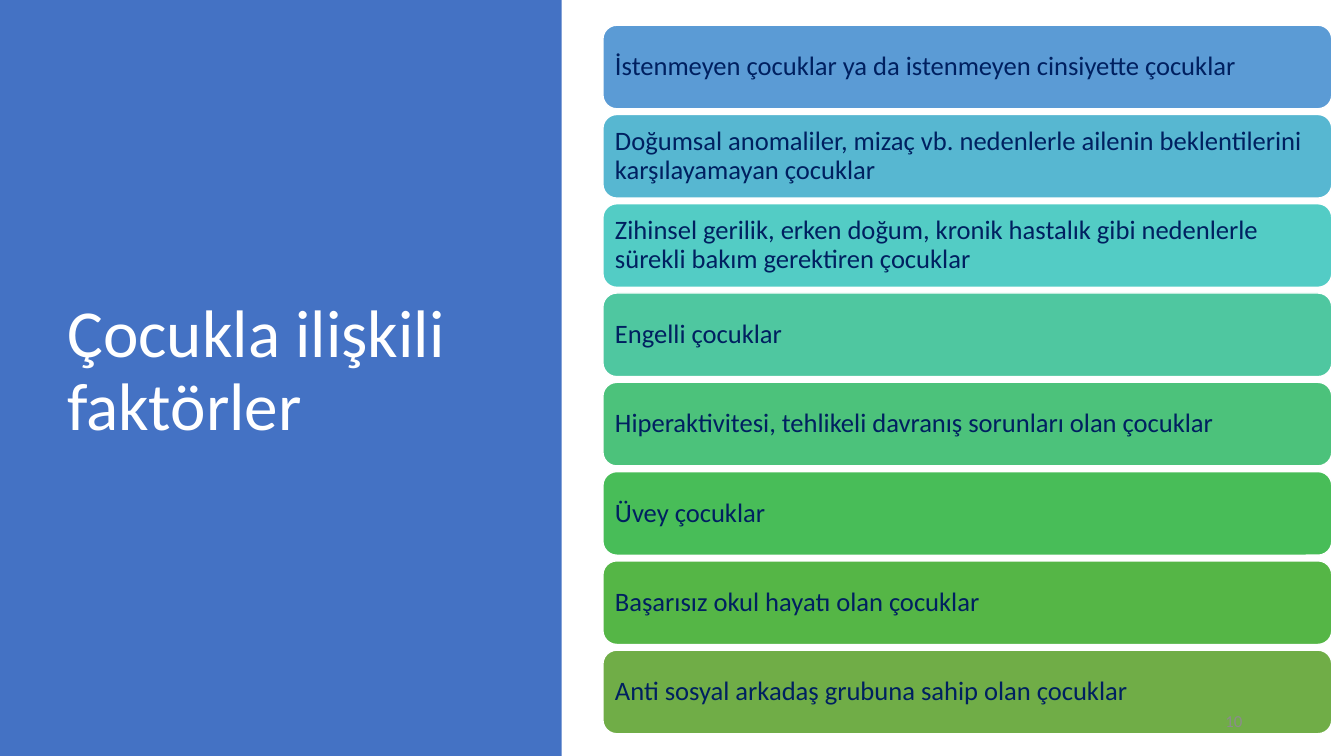
from pptx import Presentation
from pptx.dml.color import RGBColor
from pptx.enum.shapes import MSO_SHAPE
from pptx.enum.text import MSO_ANCHOR, PP_ALIGN
from pptx.util import Inches, Pt

TITLE = "Çocukla ilişkili faktörler"
PAGE = "10"
FACTORS = [
    ("İstenmeyen çocuklar ya da istenmeyen cinsiyette çocuklar", "5B9BD5"),
    ("Doğumsal anomaliler, mizaç vb. nedenlerle ailenin beklentilerini "
     "karşılayamayan çocuklar", "57B7D1"),
    ("Zihinsel gerilik, erken doğum, kronik hastalık gibi nedenlerle "
     "sürekli bakım gerektiren çocuklar", "53CCC5"),
    ("Engelli çocuklar", "4FC7A0"),
    ("Hiperaktivitesi, tehlikeli davranış sorunları olan çocuklar", "4CC27B"),
    ("Üvey çocuklar", "48BD58"),
    ("Başarısız okul hayatı olan çocuklar", "55B646"),
    ("Anti sosyal arkadaş grubuna sahip olan çocuklar", "70AD47"),
]
WHITE, NAVY, BLUE, GREY = "FFFFFF", "002060", "4472C4", "8C8C8C"
LEFT, WIDTH, HEIGHT = 5.98, 7.23, 0.83
FIRST, LAST = 0.25, 6.45


def color(code):
    return RGBColor.from_string(code)


def write(shape, text, size, ink, align=PP_ALIGN.LEFT, inset=None, lines=1.0):
    """Put one paragraph, centred vertically, into a shape."""
    frame = shape.text_frame
    frame.word_wrap = True
    frame.vertical_anchor = MSO_ANCHOR.MIDDLE
    if inset is not None:
        frame.margin_left = frame.margin_right = Inches(inset)
        frame.margin_top = frame.margin_bottom = Inches(inset)
    para = frame.paragraphs[0]
    para.alignment = align
    para.line_spacing = lines
    run = para.add_run()
    run.text = text
    run.font.size = Pt(size)
    run.font.name = "Calibri"
    run.font.color.rgb = color(ink)


def block(slide, kind, box, fill, line=None):
    """Add a filled shape, outlined only when a line colour is given."""
    shape = slide.shapes.add_shape(kind, *map(Inches, box))
    shape.shadow.inherit = False
    shape.fill.solid()
    shape.fill.fore_color.rgb = color(fill)
    if line:
        shape.line.color.rgb = color(line)
        shape.line.width = Pt(1)
    else:
        shape.line.fill.background()
    return shape


def label(slide, box, text, size, ink, **form):
    write(slide.shapes.add_textbox(*map(Inches, box)), text, size, ink, **form)


def main():
    deck = Presentation()
    deck.slide_width, deck.slide_height = Inches(13.33), Inches(7.5)
    slide = deck.slides.add_slide(deck.slide_layouts[6])

    block(slide, MSO_SHAPE.RECTANGLE, (0, 0, 5.57, 7.5), BLUE)
    label(slide, (0.57, 0.68, 4.16, 6.02), TITLE, 48, WHITE, lines=0.9)

    step = (LAST - FIRST) / (len(FACTORS) - 1)
    for i, (text, fill) in enumerate(FACTORS):
        box = (LEFT, FIRST + i * step, WIDTH, HEIGHT)
        bar = block(slide, MSO_SHAPE.ROUNDED_RECTANGLE, box, fill, line=WHITE)
        write(bar, text, 19, NAVY, inset=0.08, lines=0.9)

    label(slide, (9.42, 6.95, 3, 0.4), PAGE, 12, GREY, align=PP_ALIGN.RIGHT)
    deck.save("out.pptx")


if __name__ == "__main__":
    main()
